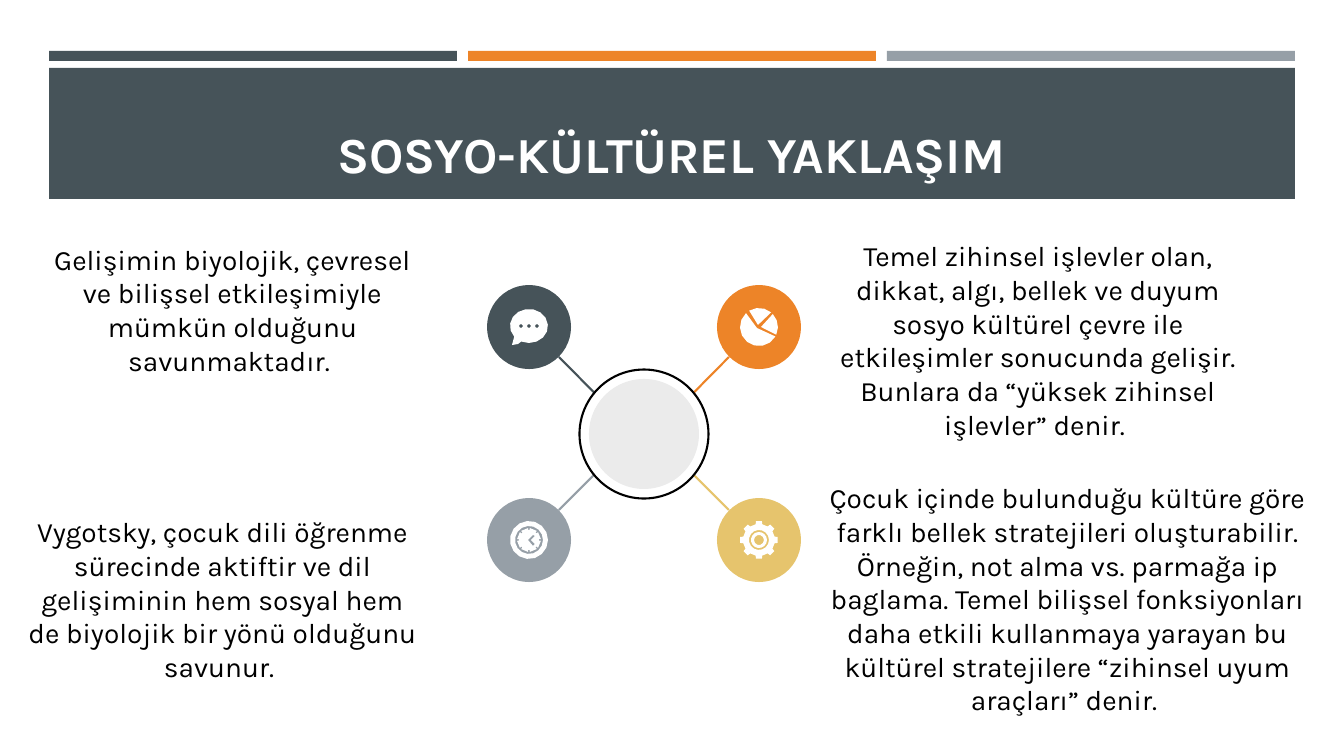
"""Builds a slide on the socio-cultural approach: four ideas around a hub."""
from math import cos, radians, sin

from lxml import etree
from pptx import Presentation
from pptx.dml.color import RGBColor
from pptx.enum.shapes import MSO_CONNECTOR, MSO_SHAPE
from pptx.enum.text import MSO_ANCHOR, PP_ALIGN
from pptx.oxml.ns import qn
from pptx.util import Emu, Pt

RECTANGLE, OVAL = MSO_SHAPE.RECTANGLE, MSO_SHAPE.OVAL
STRAIGHT = MSO_CONNECTOR.STRAIGHT
TOP, MIDDLE, BOTTOM = MSO_ANCHOR.TOP, MSO_ANCHOR.MIDDLE, MSO_ANCHOR.BOTTOM
CENTER = PP_ALIGN.CENTER

PX = 12192000 / 1344
SLIDE_SIZE = (1344, 756)
FONT = "Karla"
COLORS = {
    "slate": "465359",
    "orange": "ED8428",
    "grey": "969FA7",
    "gold": "E6C46D",
    "white": "FFFFFF",
    "black": "000000",
    "pale": "EBEBEB",
}

TITLE = "SOSYO-KÜLTÜREL YAKLAŞIM"
TITLE_BOX = (64, 78, 1215, 111)
TITLE_STYLE = {"size": Pt(36), "bold": True, "name": FONT}
BODY_STYLE = {"size": Pt(20), "name": FONT}
IDEAS = [
    ((39, 273, 387, 73), MIDDLE,
     "Gelişimin biyolojik, çevresel ve bilişsel etkileşimiyle mümkün "
     "olduğunu savunmaktadır. "),
    ((18, 505, 409, 85), TOP,
     "Vygotsky, çocuk dili öğrenme sürecinde aktiftir ve dil gelişiminin "
     "hem sosyal hem de biyolojik bir yönü olduğunu savunur. "),
    ((816, 229, 444, 85), TOP,
     "Temel zihinsel işlevler olan, dikkat, algı, bellek ve duyum sosyo "
     "kültürel çevre ile etkileşimler sonucunda gelişir. Bunlara da "
     "“yüksek zihinsel işlevler” denir. "),
    ((809, 471, 517, 85), TOP,
     "Çocuk içinde bulunduğu kültüre göre farklı bellek stratejileri "
     "oluşturabilir. Örneğin, not alma vs. parmağa ip baglama. Temel "
     "bilişsel fonksiyonları daha etkili kullanmaya yarayan bu kültürel "
     "stratejilere “zihinsel uyum araçları” denir. "),
]

BAR_COLORS = ["slate", "orange", "grey"]
BAR_LEFT, BAR_TOP, BAR_WIDTH, BAR_HEIGHT, BAR_PITCH = 49, 51, 408, 10, 419
HEADER = (49, 68, 1246, 131)
HUB = (644, 434)
HUB_SIZE, CORE_SIZE, NODE_SIZE = 129, 110, 84
COLUMNS, ROWS = (529, 759), (327, 540)
SPOKE_REACH, SPOKE_OVERLAP = 30, 9
NODES = [
    (-1, -1, "slate", "bubble"),
    (1, -1, "orange", "pie"),
    (-1, 1, "grey", "clock"),
    (1, 1, "gold", "gear"),
]


def arc(rx, ry=None, start=0, end=360, dx=0, dy=0, step=24):
    """Return points along an elliptical arc, angles in degrees."""
    sweep = end - start
    steps = max(2, round(sweep / step))
    angles = [radians(start + sweep * i / steps)
              for i in range(steps + (sweep < 360))]
    return [(dx + rx * cos(a), dy + (ry or rx) * sin(a)) for a in angles]


def wheel(profile):
    """Repeat an (angle, radius) profile eight times round a circle."""
    return [(radius * cos(radians(angle + turn)), radius * sin(radians(angle + turn)))
            for turn in range(0, 360, 45) for angle, radius in profile]


def sector(start, end, dx, dy):
    return [[(dx, dy)] + arc(19, start=start, end=end)]


ICONS = {
    "bubble": [
        [arc(19, 17, 141, 474, dy=-1) + [(-11, 17), (-17, 18)]]
        + [arc(2, dx=dx, dy=-1, step=60) for dx in (-8, 0, 8)],
    ],
    "pie": [
        sector(239, 310, -1, -2),
        sector(-43, 24, 2, 0),
        sector(30, 227, -2, 1),
    ],
    "clock": [
        [arc(19), arc(14)],
        [wheel([(-4, 12), (-4, 10), (4, 10), (4, 12)]),
         [(4, -5), (6, -4), (2, 0), (6, 4), (4, 6), (-1, 0)]],
    ],
    "gear": [
        [wheel([(-12, 16), (-9, 19), (9, 19), (12, 16)]), arc(10)],
        [arc(8), arc(5, step=36)],
    ],
}


def emu(*lengths):
    return [Emu(round(length * PX)) for length in lengths]


def rgb(name):
    return RGBColor.from_string(COLORS[name])


def paint(shape, fill, line=None):
    shape.shadow.inherit = False
    shape.fill.solid()
    shape.fill.fore_color.rgb = rgb(fill)
    if line:
        shape.line.color.rgb = rgb(line)
        shape.line.width = Pt(1.5)
    else:
        shape.line.fill.background()


def add_block(page, kind, box, fill, line=None):
    paint(page.shapes.add_shape(kind, *emu(*box)), fill, line)


def add_disc(page, x, y, size, fill, line=None):
    add_block(page, OVAL, (x - size / 2, y - size / 2, size, size), fill, line)


def add_spoke(page, start, end, color):
    spoke = page.shapes.add_connector(STRAIGHT, *emu(*start, *end))
    spoke.line.color.rgb = rgb(color)
    spoke.line.width = Pt(1.5)
    etree.SubElement(spoke._element.spPr, qn("a:effectLst"))


def add_outline(page, x, y, contours):
    """Draw closed contours as one white shape; inner ones become holes."""
    builder = None
    for contour in contours:
        first, *rest = [emu(x + dx, y + dy) for dx, dy in contour]
        if builder is None:
            builder = page.shapes.build_freeform(*first, scale=1.0)
        else:
            builder.move_to(*first)
        builder.add_line_segments(rest, close=True)
    paint(builder.convert_to_shape(), "white")


def add_text(page, box, text, anchor, style, color, inset):
    frame = page.shapes.add_textbox(*emu(*box)).text_frame
    layout = {"word_wrap": True, "vertical_anchor": anchor,
              "margin_top": inset, "margin_bottom": inset}
    for name, value in layout.items():
        setattr(frame, name, value)
    para = frame.paragraphs[0]
    para.alignment = CENTER
    span = para.add_run()
    span.text = text
    for name, value in style.items():
        setattr(span.font, name, value)
    span.font.color.rgb = rgb(color)


def main():
    deck = Presentation()
    deck.slide_width, deck.slide_height = emu(*SLIDE_SIZE)
    page = deck.slides.add_slide(deck.slide_layouts[6])

    for i, color in enumerate(BAR_COLORS):
        bar = (BAR_LEFT + i * BAR_PITCH, BAR_TOP, BAR_WIDTH, BAR_HEIGHT)
        add_block(page, RECTANGLE, bar, color)
    add_block(page, RECTANGLE, HEADER, "slate")
    add_text(page, TITLE_BOX, TITLE, BOTTOM, TITLE_STYLE, "white", emu(5)[0])

    hub_x, hub_y = HUB
    for side, level, color, icon in NODES:
        x, y = COLUMNS[side > 0], ROWS[level > 0]
        add_disc(page, x, y, NODE_SIZE, color)
        add_spoke(page, (hub_x, hub_y - level * SPOKE_OVERLAP),
                  (x - side * SPOKE_REACH, y - level * SPOKE_REACH), color)
        for contours in ICONS[icon]:
            add_outline(page, x, y, contours)
    add_disc(page, hub_x, hub_y, HUB_SIZE, "white", "black")
    add_disc(page, hub_x, hub_y, CORE_SIZE, "pale")

    for box, anchor, text in IDEAS:
        add_text(page, box, text, anchor, BODY_STYLE, "black", emu(10)[0])
    deck.save("out.pptx")


if __name__ == "__main__":
    main()
